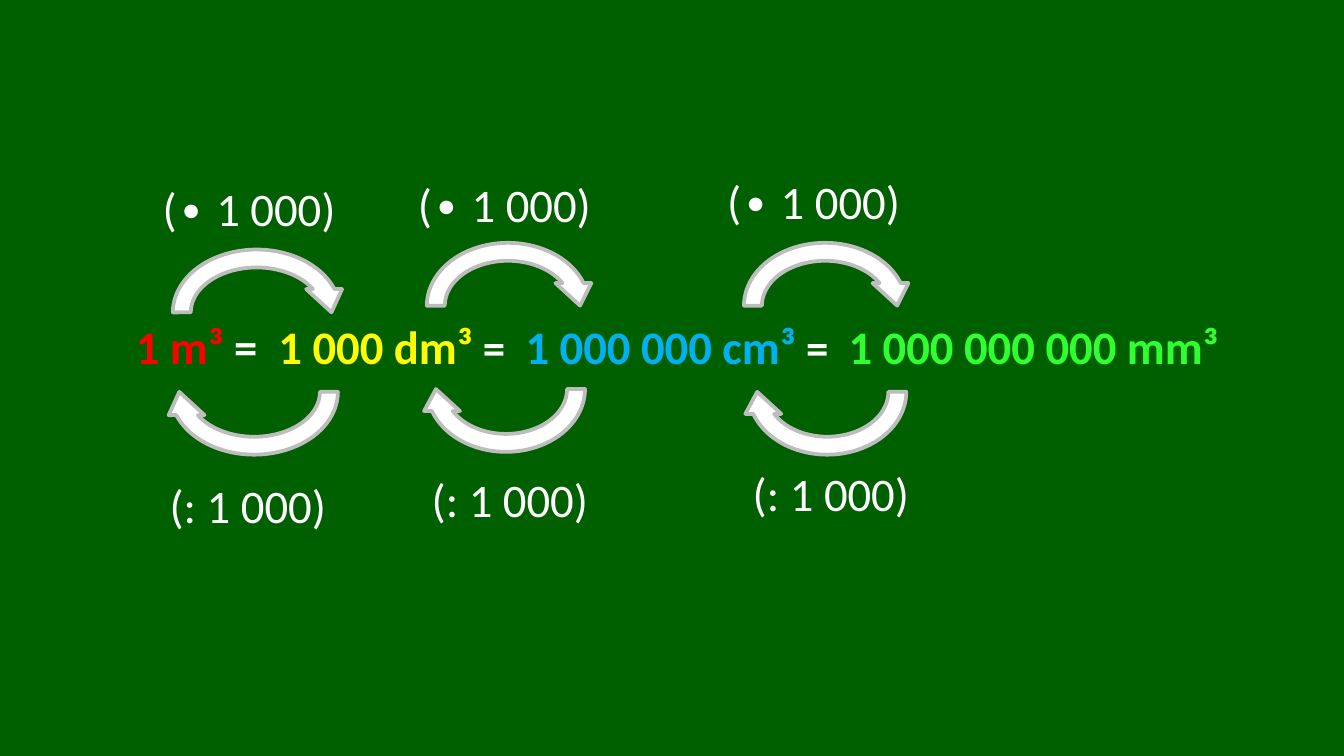
from dataclasses import dataclass

from pptx import Presentation
from pptx.dml.color import RGBColor
from pptx.enum.shapes import MSO_SHAPE
from pptx.enum.text import MSO_ANCHOR, PP_ALIGN
from pptx.util import Pt


@dataclass(frozen=True)
class Theme:
    font: str = "Calibri"
    board: str = "006000"
    chalk: str = "FFFFFF"
    outline: str = "BDBDBD"
    cubic_metre: str = "FF0000"
    cubic_decimetre: str = "FFFF00"
    cubic_centimetre: str = "00B0F0"
    cubic_millimetre: str = "30FF30"
    large: float = 25
    medium: float = 24
    small: float = 18
    line: float = 2


THEME = Theme()
ARROW_HEIGHT = 77
LABEL_WIDTH, LABEL_HEIGHT = 113, 51

EQUATION = [
    ("1 m³ ", THEME.large, THEME.cubic_metre),
    ("=  ", THEME.large, THEME.chalk),
    ("1 000 dm³ ", THEME.large, THEME.cubic_decimetre),
    ("=  ", THEME.medium, THEME.chalk),
    ("1 000 000 cm³ ", THEME.large, THEME.cubic_centimetre),
    ("=  ", THEME.medium, THEME.chalk),
    ("1 000 000 000 mm³", THEME.large, THEME.cubic_millimetre),
]

MULTIPLY_ARROWS = [(87.8, 128.9, 99.4), (223.9, 125.3, 96.5), (393.8, 125.3, 96.5)]
DIVIDE_ARROWS = [(86.4, 171.4, 99.4), (223.9, 169.9, 94.3), (396, 171.4, 94.3)]
MULTIPLY_LABELS = [(74.9, 85.7), (211.7, 83.5), (377.3, 82.1)]
DIVIDE_LABELS = [(74.2, 244.8), (214.6, 241.9), (386.6, 238.3)]


def color(value):
    return RGBColor.from_string(value)


def add_shape(page, kind, left, top, width, height, fill, line):
    shape = page.shapes.add_shape(kind, Pt(left), Pt(top), Pt(width), Pt(height))
    shape.shadow.inherit = False
    shape.fill.solid()
    shape.fill.fore_color.rgb = color(fill)
    shape.line.color.rgb = color(line)
    shape.line.width = Pt(THEME.line)
    return shape


def write_centered(box, spans, bold=False):
    frame = box.text_frame
    frame.word_wrap = True
    frame.vertical_anchor = MSO_ANCHOR.MIDDLE
    para = frame.paragraphs[0]
    para.alignment = PP_ALIGN.CENTER
    for text, size, ink in spans:
        span = para.add_run()
        span.text = text
        span.font.name = THEME.font
        span.font.size = Pt(size)
        span.font.bold = bold
        span.font.color.rgb = color(ink)


def add_equation(page):
    box = add_shape(page, MSO_SHAPE.RECTANGLE, 51, 129, 623.5, 113, THEME.board, THEME.board)
    write_centered(box, EQUATION, bold=True)


def add_arrow(page, left, top, width, rotation):
    arrow = add_shape(page, MSO_SHAPE.CIRCULAR_ARROW, left, top, width, ARROW_HEIGHT,
                      THEME.chalk, THEME.outline)
    arrow.rotation = rotation


def add_label(page, left, top, text):
    box = page.shapes.add_textbox(Pt(left), Pt(top), Pt(LABEL_WIDTH), Pt(LABEL_HEIGHT))
    write_centered(box, [(" ", THEME.small, THEME.chalk), (text, THEME.large, THEME.chalk)])


def main():
    deck = Presentation()
    deck.slide_width, deck.slide_height = Pt(720), Pt(405)
    page = deck.slides.add_slide(deck.slide_layouts[6])
    page.background.fill.solid()
    page.background.fill.fore_color.rgb = color(THEME.board)

    add_equation(page)
    for arrows, labels, rotation, text in [
        (MULTIPLY_ARROWS, MULTIPLY_LABELS, 0, "(∙ 1 000)"),
        (DIVIDE_ARROWS, DIVIDE_LABELS, 180, "(: 1 000)"),
    ]:
        for arrow in arrows:
            add_arrow(page, *arrow, rotation)
        for label in labels:
            add_label(page, *label, text)

    deck.save("out.pptx")


if __name__ == "__main__":
    main()
